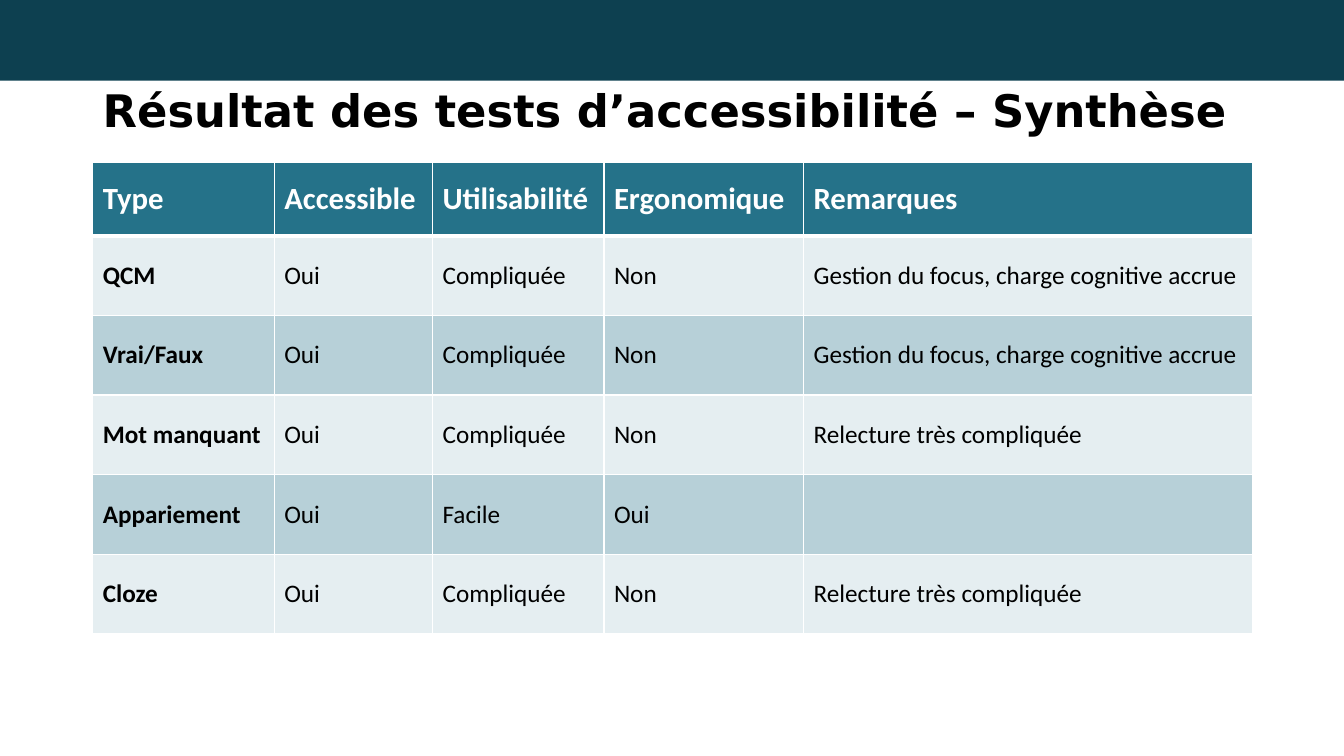
from dataclasses import dataclass

import lxml.etree
import pptx
import pptx.dml.color
import pptx.enum.shapes
import pptx.enum.text
import pptx.oxml.ns
import pptx.util

Inches = pptx.util.Inches


@dataclass(frozen=True)
class Theme:
    banner: str = "0D4050"
    header: str = "257289"
    light_band: str = "E5EEF1"
    dark_band: str = "B7D0D8"
    white: str = "FFFFFF"
    black: str = "000000"
    title_font: str = "DejaVu Sans"
    table_font: str = "Calibri"
    title_size: int = 32
    header_size: int = 22
    body_size: int = 18
    thin_border: int = 1
    thick_border: int = 3


@dataclass(frozen=True)
class TextStyle:
    font: str
    size: int
    color: str
    bold: bool


@dataclass(frozen=True)
class Column:
    heading: str
    width: float


@dataclass(frozen=True)
class TestResult:
    question_type: str
    accessible: str
    usability: str
    ergonomic: str
    remarks: str = ""

    def values(self) -> list[str]:
        return [self.question_type, self.accessible, self.usability,
                self.ergonomic, self.remarks]


THEME = Theme()
TITLE_STYLE = TextStyle(THEME.title_font, THEME.title_size, THEME.black, True)
HEADER_STYLE = TextStyle(THEME.table_font, THEME.header_size, THEME.white, True)
TYPE_STYLE = TextStyle(THEME.table_font, THEME.body_size, THEME.black, True)
VALUE_STYLE = TextStyle(THEME.table_font, THEME.body_size, THEME.black, False)

SLIDE_WIDTH = 13.33
MARGIN = 0.92
HEADER_HEIGHT = 0.73
ROW_HEIGHT = 0.79

COLUMNS = [
    Column("Type", 1.8),
    Column("Accessible", 1.57),
    Column("Utilisabilité", 1.7),
    Column("Ergonomique", 1.98),
    Column("Remarques", 4.45),
]
TABLE_WIDTH = sum(column.width for column in COLUMNS)

FOCUS_REMARK = "Gestion du focus, charge cognitive accrue"
REVIEW_REMARK = "Relecture très compliquée"
RESULTS = [
    TestResult("QCM", "Oui", "Compliquée", "Non", FOCUS_REMARK),
    TestResult("Vrai/Faux", "Oui", "Compliquée", "Non", FOCUS_REMARK),
    TestResult("Mot manquant", "Oui", "Compliquée", "Non", REVIEW_REMARK),
    TestResult("Appariement", "Oui", "Facile", "Oui"),
    TestResult("Cloze", "Oui", "Compliquée", "Non", REVIEW_REMARK),
]


def rgb(color: str) -> pptx.dml.color.RGBColor:
    return pptx.dml.color.RGBColor.from_string(color)


def add_run(para, text: str, style: TextStyle) -> None:
    run = para.add_run()
    run.text = text
    run.font.name = style.font
    run.font.size = pptx.util.Pt(style.size)
    run.font.bold = style.bold
    run.font.color.rgb = rgb(style.color)


def add_banner(slide) -> None:
    banner = slide.shapes.add_shape(
        pptx.enum.shapes.MSO_SHAPE.RECTANGLE,
        0, 0, Inches(SLIDE_WIDTH), Inches(0.8))
    banner.shadow.inherit = False
    banner.fill.solid()
    banner.fill.fore_color.rgb = rgb(THEME.banner)
    banner.line.fill.background()


def add_title(slide, text: str) -> None:
    box = slide.shapes.add_textbox(
        Inches(MARGIN), Inches(0.4), Inches(TABLE_WIDTH), Inches(1.45))
    frame = box.text_frame
    frame.word_wrap = True
    frame.vertical_anchor = pptx.enum.text.MSO_ANCHOR.MIDDLE
    para = frame.paragraphs[0]
    para.line_spacing = 0.9
    add_run(para, text, TITLE_STYLE)


def set_borders(cell, top: int, bottom: int) -> None:
    """Draw white cell borders; widths are in points and sides are thin."""
    qualify = pptx.oxml.ns.qn
    properties = cell._tc.get_or_add_tcPr()
    widths = {"a:lnL": THEME.thin_border, "a:lnR": THEME.thin_border,
              "a:lnT": top, "a:lnB": bottom}
    for tag, width in widths.items():
        line = lxml.etree.SubElement(
            properties, qualify(tag), w=str(pptx.util.Pt(width)))
        fill = lxml.etree.SubElement(line, qualify("a:solidFill"))
        lxml.etree.SubElement(fill, qualify("a:srgbClr"), val=THEME.white)


def fill_cell(cell, text: str, style: TextStyle, color: str,
              top: int, bottom: int) -> None:
    set_borders(cell, top, bottom)
    cell.fill.solid()
    cell.fill.fore_color.rgb = rgb(color)
    cell.vertical_anchor = pptx.enum.text.MSO_ANCHOR.MIDDLE
    if text:
        add_run(cell.text_frame.paragraphs[0], text, style)


def add_results_table(slide) -> None:
    height = HEADER_HEIGHT + ROW_HEIGHT * len(RESULTS)
    table = slide.shapes.add_table(
        len(RESULTS) + 1, len(COLUMNS), Inches(MARGIN), Inches(1.61),
        Inches(TABLE_WIDTH), Inches(height)).table
    table.rows[0].height = Inches(HEADER_HEIGHT)
    for index, column in enumerate(COLUMNS):
        table.columns[index].width = Inches(column.width)
        fill_cell(table.cell(0, index), column.heading, HEADER_STYLE,
                  THEME.header, THEME.thin_border, THEME.thick_border)
    for row, result in enumerate(RESULTS, start=1):
        table.rows[row].height = Inches(ROW_HEIGHT)
        band = THEME.light_band if row % 2 else THEME.dark_band
        top = THEME.thick_border if row == 1 else THEME.thin_border
        for index, value in enumerate(result.values()):
            style = VALUE_STYLE if index else TYPE_STYLE
            fill_cell(table.cell(row, index), value, style, band,
                      top, THEME.thin_border)


def main() -> None:
    deck = pptx.Presentation()
    deck.slide_width = Inches(SLIDE_WIDTH)
    deck.slide_height = Inches(7.5)
    slide = deck.slides.add_slide(deck.slide_layouts[6])
    add_banner(slide)
    add_title(slide, "Résultat des tests d’accessibilité – Synthèse")
    add_results_table(slide)
    deck.save("out.pptx")


if __name__ == "__main__":
    main()
